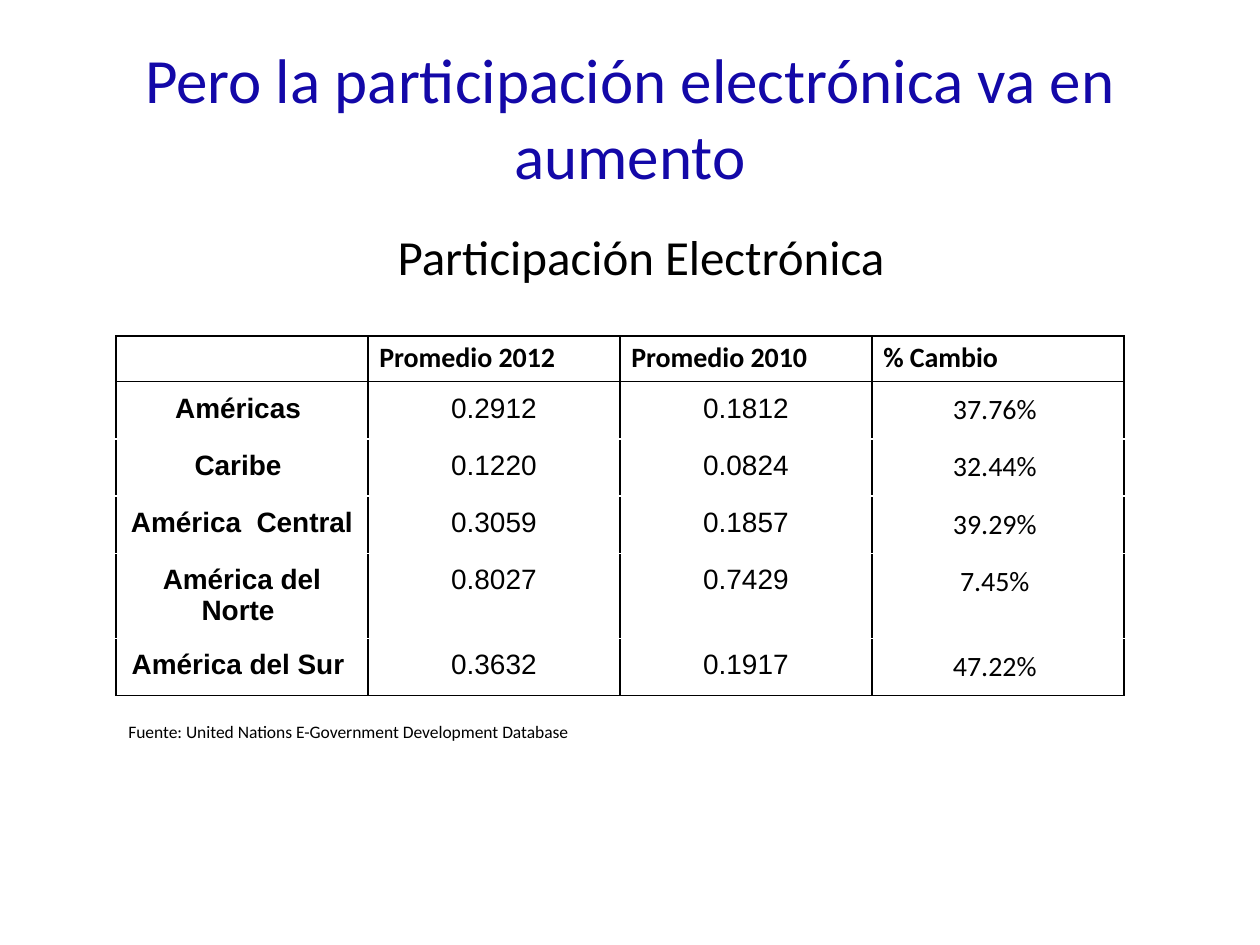
import pptx
import pptx.util
import pptx.dml.color
import pptx.enum.text
import pptx.oxml
import pptx.oxml.ns

Pt = pptx.util.Pt
ALIGN = pptx.enum.text.PP_ALIGN
ANCHOR = pptx.enum.text.MSO_ANCHOR

# Content
TITLE = "Pero la participación electrónica va en aumento"
HEADING = "Participación Electrónica"
SOURCE = "Fuente: United Nations E-Government Development Database"
HEAD = ("", "Promedio 2012", "Promedio 2010", "% Cambio")
ROWS = [
    ("Américas ", "0.2912", "0.1812", "37.76% "),
    ("Caribe ", "0.1220", "0.0824", "32.44% "),
    ("América  Central", "0.3059", "0.1857", "39.29% "),
    ("América del Norte ", "0.8027", "0.7429", "7.45% "),
    ("América del Sur ", "0.3632", "0.1917", "47.22% "),
]
FONTS = ("Arial", "Arial", "Arial", "Calibri")
BLACK, WHITE, BLUE = "000000", "FFFFFF", "1308A8"
LEFT, COL, HEAD_H, ROW_H = 66.24, 144, 26, 32.7


def paint(color, code):
    color.rgb = pptx.dml.color.RGBColor.from_string(code)


def write(frame, text, size, font="Calibri", code=BLACK, bold=False, align=ALIGN.CENTER):
    par = frame.paragraphs[0]
    par.alignment = align
    run = par.add_run()
    run.text = text
    run.font.size = Pt(size)
    run.font.name = font
    run.font.bold = bold
    paint(run.font.color, code)


def label(slide, box, text, size, align):
    frame = slide.shapes.add_textbox(*map(Pt, box)).text_frame
    frame.word_wrap = True
    frame.auto_size = pptx.enum.text.MSO_AUTO_SIZE.SHAPE_TO_FIT_TEXT
    write(frame, text, size, align=align)


def border(cell, sides):
    props = cell._tc.get_or_add_tcPr()
    for side in sides:
        props.append(pptx.oxml.parse_xml(
            f'<a:ln{side} {pptx.oxml.ns.nsdecls("a")} w="{Pt(1)}"><a:solidFill>'
            f'<a:srgbClr val="{BLACK}"/></a:solidFill></a:ln{side}>'))


def main():
    deck = pptx.Presentation()
    deck.slide_width, deck.slide_height = Pt(720), Pt(540)
    slide = deck.slides.add_slide(deck.slide_layouts[5])

    # Title
    title = slide.shapes.title
    title.left, title.top, title.width, title.height = map(Pt, (36, 21.6, 648, 90))
    title.text_frame.vertical_anchor = ANCHOR.MIDDLE
    write(title.text_frame, TITLE, 36, code=BLUE)

    # Table
    grid = [HEAD] + ROWS
    last = len(ROWS)
    table = slide.shapes.add_table(
        len(grid), len(HEAD), Pt(LEFT), Pt(192), Pt(COL * len(HEAD)),
        Pt(HEAD_H + ROW_H * last)).table
    table.first_row = table.horz_banding = False
    for col in table.columns:
        col.width = Pt(COL)
    for r, row in enumerate(grid):
        top = r == 0
        table.rows[r].height = Pt(HEAD_H if top else ROW_H)
        sides = ["L", "R"] + ["T"] * (r < 2) + ["B"] * (r in (0, last))
        for c, text in enumerate(row):
            cell = table.cell(r, c)
            cell.margin_left = cell.margin_right = Pt(6.5)
            cell.margin_top = cell.margin_bottom = Pt(3 if top else 6.5)
            border(cell, sides)
            cell.fill.solid()
            paint(cell.fill.fore_color, WHITE)
            write(cell.text_frame, text, 16, "Calibri" if top else FONTS[c],
                  bold=top or c == 0, align=ALIGN.LEFT if top else ALIGN.CENTER)

    # Heading and source
    label(slide, (LEFT, 126, 600, 41), HEADING, 28, ALIGN.CENTER)
    label(slide, (LEFT, 408.24, 624, 19.4), SOURCE, 10, ALIGN.LEFT)

    deck.save("out.pptx")


if __name__ == "__main__":
    main()
